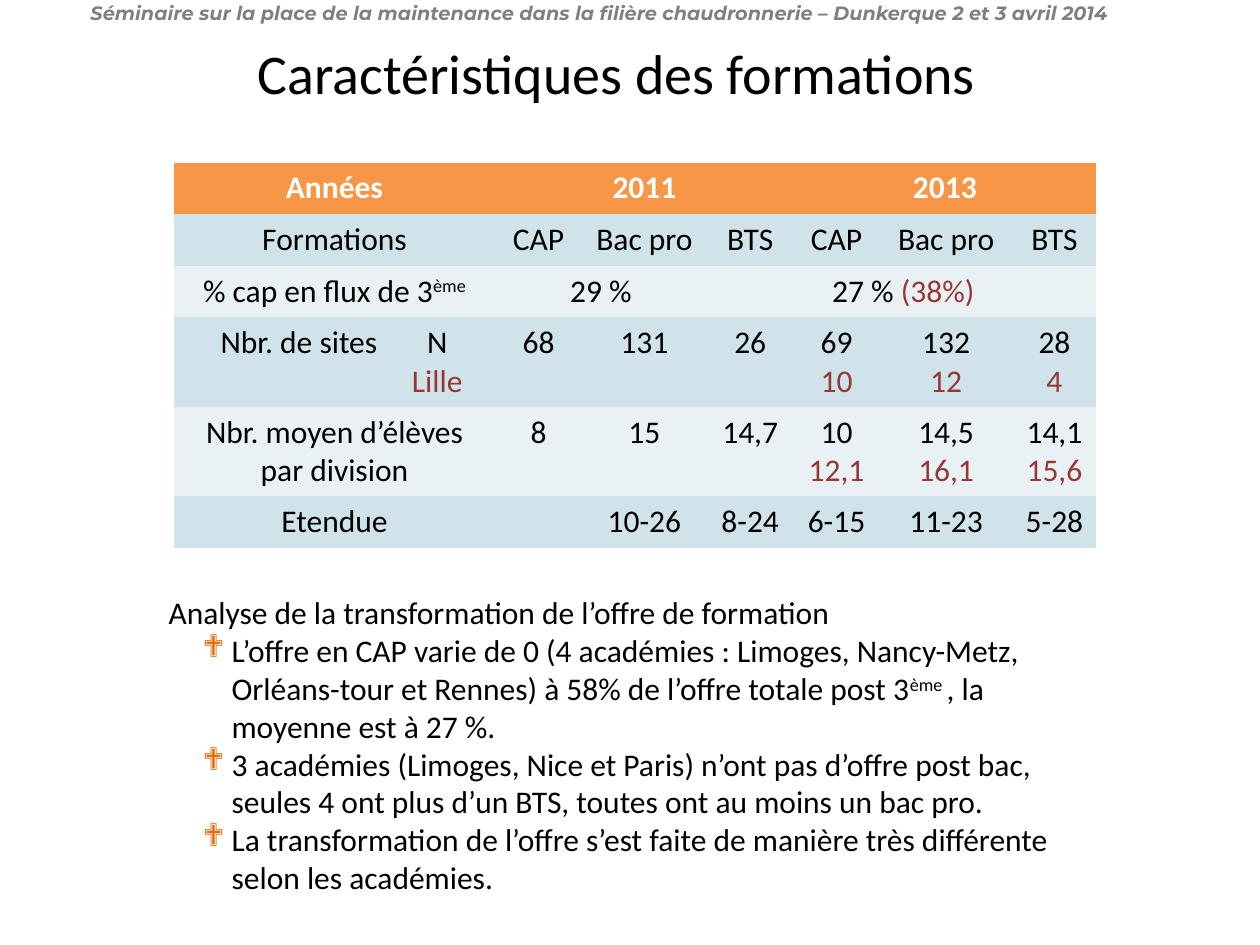
from lxml.etree import SubElement
from pptx import Presentation
from pptx.dml.color import RGBColor
from pptx.enum.text import MSO_ANCHOR, PP_ALIGN
from pptx.oxml.ns import qn
from pptx.util import Inches, Pt

BLACK, WHITE, RED, GREY = "000000", "FFFFFF", "953735", "7F7F7F"
ORANGE, BULLET, BAND_DARK, BAND_LIGHT = "F79646", "E46C0A", "D0E3EA", "E9F1F5"
NO_GRID_STYLE = "{2D5ABB26-0587-4C30-8999-92F81FD0307C}"

COLUMN_WIDTHS = [2.55, 0.69, 0.99, 0.69, 0.68, 1.06, 0.66]
ROW_HEIGHTS = [0.41, 0.41, 0.41, 0.71, 0.71, 0.41]
ROWS = [
    ["Années", "2011", "", "", "2013", "", ""],
    ["Formations", "CAP", "Bac pro", "BTS", "CAP", "Bac pro", "BTS"],
    ["% cap en flux de 3^ème", "29 %", "", "", "27 % |(38%)", "", ""],
    ["\tNbr. de sites\tN\n\tLille", "68", "131", "26", "69\n10", "132\n12", "28\n4"],
    ["Nbr. moyen d’élèves par division", "8", "15", "14,7",
     "10\n12,1", "14,5\n16,1", "14,1\n15,6"],
    ["Etendue", "", "10-26", "8-24", "6-15", "11-23", "5-28"],
]
MERGES = [(0, 1, 3), (0, 4, 6), (2, 1, 2), (2, 4, 5)]
SITE_TABS = [[(0.27, "l"), (1.99, "ctr")], [(1.99, "ctr")]]

FINDINGS = [
    ["L’offre en CAP varie de 0 (4 académies : Limoges, Nancy-Metz, "
     "Orléans-tour et Rennes) à 58% de l’offre totale post 3",
     "ème ", ", la moyenne est à 27 %."],
    ["3 académies (Limoges, Nice et Paris) n’ont pas d’offre post bac, "
     "seules 4 ont plus d’un BTS, toutes ont au moins un bac pro."],
    ["La transformation de l’offre s’est faite de manière très différente "
     "selon les académies."],
]


def rgb(value):
    return RGBColor.from_string(value)


def add_run(p, text, color=BLACK, size=18, font="Calibri", bold=False, raised=False):
    r = p.add_run()
    r.text = text
    r.font.size, r.font.name, r.font.bold = Pt(size), font, bold
    r.font.color.rgb = rgb(color)
    if raised:
        r.font._element.set("baseline", "30000")
    return r


def add_box(slide, x, y, w, h):
    sp = slide.shapes.add_textbox(Inches(x), Inches(y), Inches(w), Inches(h))
    sp.text_frame.word_wrap = True
    return sp.text_frame


def set_tabs(p, stops):
    tabs = SubElement(p._p.get_or_add_pPr(), qn("a:tabLst"))
    for position, align in stops:
        SubElement(tabs, qn("a:tab"), pos=str(Inches(position)), algn=align)


def set_bullet(p, char, color):
    pPr = p._p.get_or_add_pPr()
    pPr.set("marL", str(Inches(0.5)))
    pPr.set("indent", str(Inches(-0.23)))
    clr = SubElement(pPr, qn("a:buClr"))
    SubElement(clr, qn("a:srgbClr"), val=color)
    SubElement(pPr, qn("a:buFont"), typeface="Wingdings")
    SubElement(pPr, qn("a:buChar"), char=char)


def add_banner(slide, x, y, w, h):
    p = add_box(slide, x, y, w, h).paragraphs[0]
    r = add_run(p, "Séminaire sur la place de la maintenance dans la filière "
                "chaudronnerie – Dunkerque 2 et 3 avril 2014",
                GREY, 11, "Montserrat", True)
    r.font.italic = True


def add_title(slide, x, y, w, h):
    sp = slide.shapes.title
    sp.left, sp.top, sp.width, sp.height = map(Inches, (x, y, w, h))
    sp.text_frame.vertical_anchor = MSO_ANCHOR.MIDDLE
    p = sp.text_frame.paragraphs[0]
    p.alignment = PP_ALIGN.CENTER
    add_run(p, "Caractéristiques des formations", size=32)


def fill_cell(cell, text, header):
    tf = cell.text_frame
    for i, line in enumerate(text.split("\n")):
        p = tf.add_paragraph() if i else tf.paragraphs[0]
        p.alignment = PP_ALIGN.CENTER
        if line.startswith("\t"):
            p.alignment = PP_ALIGN.LEFT
            set_tabs(p, SITE_TABS[i])
        color = WHITE if header else RED if i else BLACK
        main, _, regional = line.partition("|")
        base, _, raised = main.partition("^")
        if base:
            add_run(p, base, color, bold=header)
        if raised:
            add_run(p, raised, color, raised=True)
        if regional:
            add_run(p, regional, RED)


def add_training_table(slide, x, y, w, h):
    frame = slide.shapes.add_table(len(ROWS), len(COLUMN_WIDTHS),
                                   Inches(x), Inches(y), Inches(w), Inches(h))
    table = frame.table
    table._tbl.tblPr.find(qn("a:tableStyleId")).text = NO_GRID_STYLE
    for column, width in zip(table.columns, COLUMN_WIDTHS):
        column.width = Inches(width)
    for row, height in zip(table.rows, ROW_HEIGHTS):
        row.height = Inches(height)
    for row, first, last in MERGES:
        table.cell(row, first).merge(table.cell(row, last))
    for i, texts in enumerate(ROWS):
        band = ORANGE if i == 0 else BAND_DARK if i % 2 else BAND_LIGHT
        for j, text in enumerate(texts):
            cell = table.cell(i, j)
            cell.fill.solid()
            cell.fill.fore_color.rgb = rgb(band)
            fill_cell(cell, text, i == 0)


def add_analysis(slide, x, y, w, h):
    tf = add_box(slide, x, y, w, h)
    add_run(tf.paragraphs[0], "Analyse de la transformation de l’offre de formation")
    for parts in FINDINGS:
        p = tf.add_paragraph()
        p.level = 1
        set_bullet(p, "❖", BULLET)
        for i, part in enumerate(parts):
            add_run(p, part, raised=i == 1)


def main():
    prs = Presentation()
    prs.slide_width, prs.slide_height = Inches(10), Inches(7.5)
    slide = prs.slides.add_slide(prs.slide_layouts[5])
    add_banner(slide, 0.62, -0.04, 8.73, 0.29)
    add_title(slide, 1.7, 0.15, 6.39, 0.85)
    add_training_table(slide, 1.38, 1.29, 7.32, 3.06)
    add_analysis(slide, 1.24, 4.66, 7.37, 2.52)
    prs.save("out.pptx")


if __name__ == "__main__":
    main()
